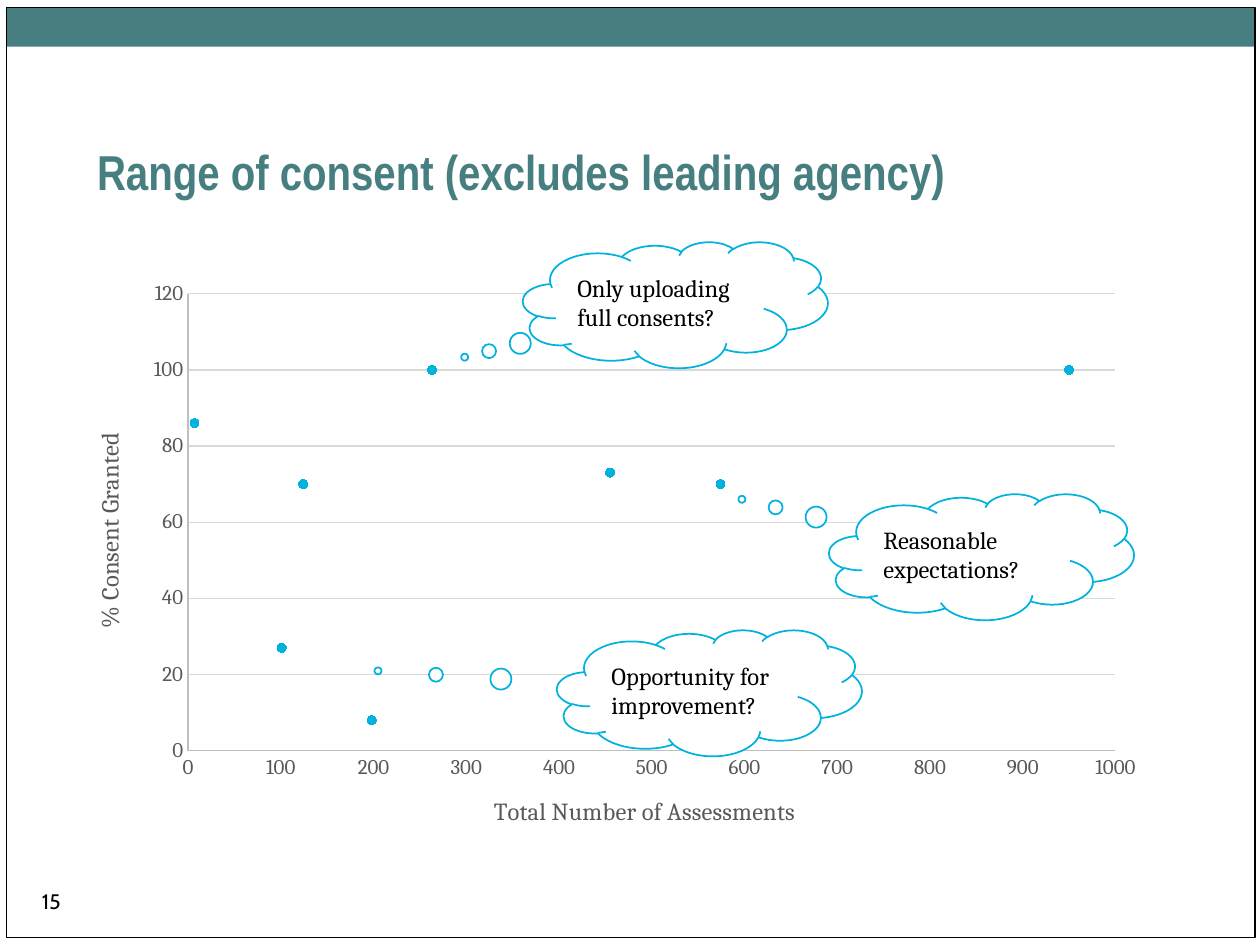
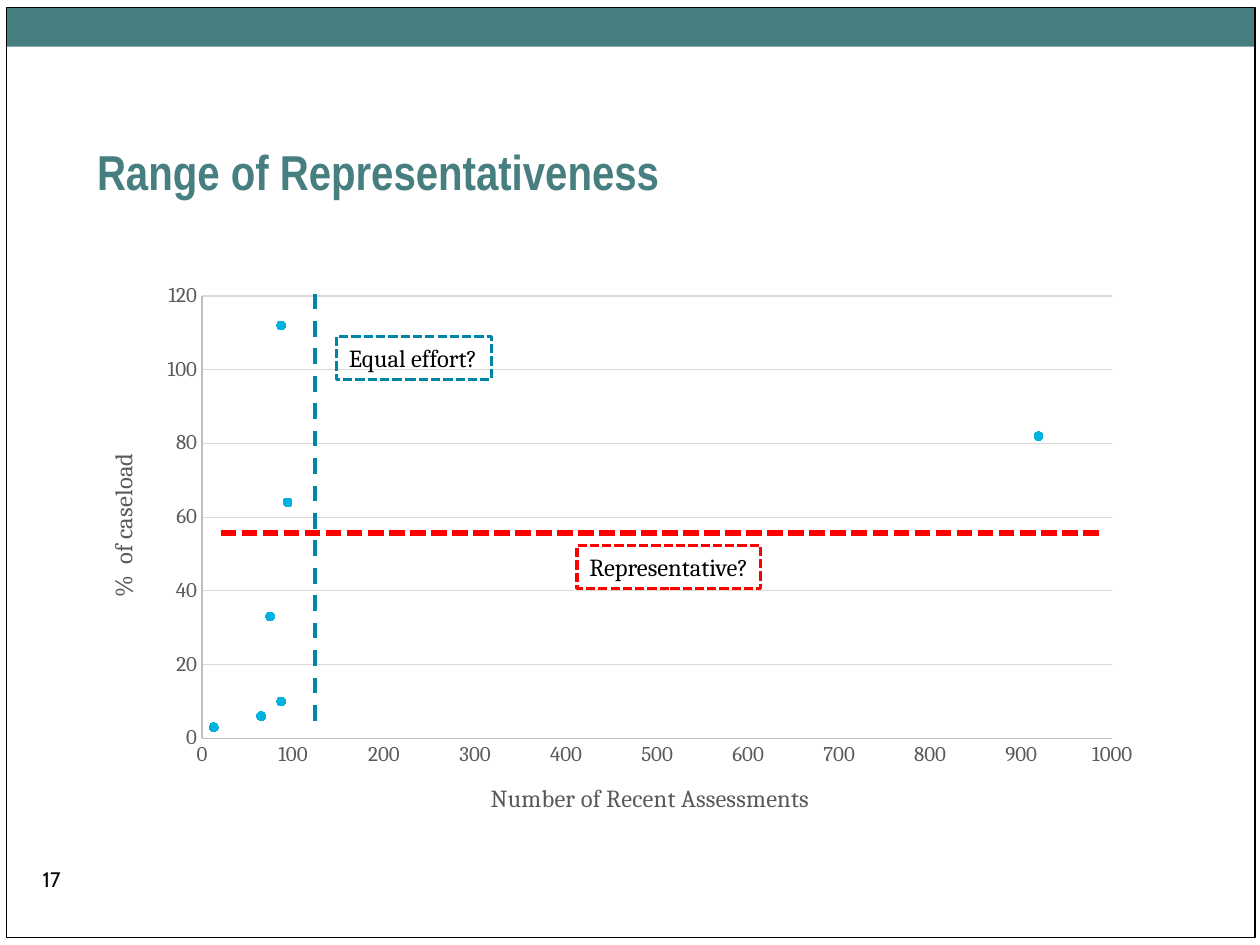
from collections import namedtuple

from lxml.etree import SubElement
from pptx import Presentation
from pptx.chart.data import XyChartData
from pptx.dml.color import RGBColor
from pptx.enum.chart import XL_CHART_TYPE, XL_MARKER_STYLE, XL_TICK_MARK
from pptx.enum.dml import MSO_LINE
from pptx.enum.shapes import MSO_CONNECTOR, MSO_SHAPE
from pptx.enum.text import MSO_ANCHOR, PP_ALIGN
from pptx.oxml import parse_xml
from pptx.oxml.ns import nsdecls, qn
from pptx.util import Inches, Pt

Box = namedtuple("Box", "left top width height")

TEAL, CYAN, DARK_CYAN, RED = "477F80", "00B2DD", "0085A6", "FF0000"
BLACK, WHITE, AXIS_TEXT, AXIS_LINE, GRID_LINE = "000000", "FFFFFF", "595959", "BFBFBF", "D9D9D9"
TITLE_FONT, NUMBER_FONT, BODY_FONT = "Arial Narrow", "Cabin", "Cambria"

FRAME_BOX = Box(0.05, 0.06, 9.91, 7.38)
BAND_BOX = FRAME_BOX._replace(height=0.31)
TITLE_BOX = Box(0.67, 0.64, 8.5, 1)
CHART_BOX = Box(0.66, 2.17, 8.5, 4.5)


def color(hex_string):
    return RGBColor.from_string(hex_string)


def inches(box):
    return [Inches(length) for length in box]


def within(outer, left, top, width, height):
    """Shift a box by the corner of the box that holds it."""
    return Box(outer.left + left, outer.top + top, width, height)


def style_font(font, name, size, hex_color, bold=False):
    font.name, font.size, font.bold = name, Pt(size), bold
    font.color.rgb = color(hex_color)


def style_line(line, hex_color, width, dash=None):
    line.color.rgb = color(hex_color)
    line.width = Pt(width)
    if dash is not None:
        line.dash_style = dash


def write(shape, text, font_name, size, hex_color, align=PP_ALIGN.LEFT, bold=False):
    shape.text_frame.text = text
    paragraph = shape.text_frame.paragraphs[0]
    paragraph.alignment = align
    style_font(paragraph.runs[0].font, font_name, size, hex_color, bold)


def add_master_decor(presentation, slide):
    """Draw the band and frame, then move them behind the master's placeholders."""
    band = slide.shapes.add_shape(MSO_SHAPE.RECTANGLE, *inches(BAND_BOX))
    band.fill.solid()
    band.fill.fore_color.rgb = color(TEAL)
    band.line.fill.background()
    frame = slide.shapes.add_shape(MSO_SHAPE.RECTANGLE, *inches(FRAME_BOX))
    frame.fill.background()
    style_line(frame.line, BLACK, 0.75)
    master_tree = presentation.slide_master.shapes.element
    for position, shape in enumerate((band, frame), start=2):
        shape.shadow.inherit = False
        master_tree.insert(position, shape.element)


def add_titled_slide(presentation, title, number, number_top):
    slide = presentation.slides.add_slide(presentation.slide_layouts[5])
    heading = slide.shapes.title
    heading.left, heading.top, heading.width, heading.height = inches(TITLE_BOX)
    write(heading, title, TITLE_FONT, 28, TEAL, bold=True)
    heading.text_frame.vertical_anchor = MSO_ANCHOR.BOTTOM
    number_box = slide.shapes.add_textbox(*inches(Box(0, number_top, 0.58, 0.5)))
    write(number_box, number, NUMBER_FONT, 12, BLACK, PP_ALIGN.RIGHT)
    return slide


def style_axis(axis, title, maximum, unit):
    axis.minimum_scale, axis.maximum_scale, axis.major_unit = 0, maximum, unit
    axis.major_tick_mark = axis.minor_tick_mark = XL_TICK_MARK.NONE
    style_font(axis.tick_labels.font, BODY_FONT, 12, AXIS_TEXT)
    style_line(axis.format.line, AXIS_LINE, 0.75)
    axis.axis_title.text_frame.text = title
    run = axis.axis_title.text_frame.paragraphs[0].runs[0]
    style_font(run.font, BODY_FONT, 14, AXIS_TEXT)


def set_plot_layout(chart, plot_box):
    """Fix the inner plot area, given as fractions of the chart."""
    plot_area = chart.element.find(".//" + qn("c:plotArea"))
    for layout in plot_area.findall(qn("c:layout")):
        plot_area.remove(layout)
    modes = '<c:layoutTarget val="inner"/><c:xMode val="edge"/><c:yMode val="edge"/>'
    sizes = "".join(f'<c:{tag} val="{value}"/>' for tag, value in zip("xywh", plot_box))
    plot_area.insert(0, parse_xml(
        f'<c:layout {nsdecls("c")}><c:manualLayout>{modes}{sizes}</c:manualLayout></c:layout>'))


def add_scatter(slide, box, points, x_title, y_title, plot_box):
    data = XyChartData()
    series = data.add_series("Series 1")
    for x, y in points:
        series.add_data_point(x, y)
    chart = slide.shapes.add_chart(XL_CHART_TYPE.XY_SCATTER, *inches(box), data).chart
    chart.has_legend = chart.has_title = False
    style_font(chart.font, BODY_FONT, 10, BLACK)
    style_axis(chart.category_axis, x_title, 1000, 100)
    style_axis(chart.value_axis, y_title, 120, 20)
    chart.category_axis.has_major_gridlines = False
    style_line(chart.value_axis.major_gridlines.format.line, GRID_LINE, 0.75)
    plot = chart.plots[0]
    plot.vary_by_categories = False
    dots = plot.series[0]
    dots.smooth = False
    dots.format.line.fill.background()
    dots.marker.style, dots.marker.size = XL_MARKER_STYLE.CIRCLE, 5
    dots.marker.format.fill.solid()
    dots.marker.format.fill.fore_color.rgb = color(CYAN)
    style_line(dots.marker.format.line, CYAN, 0.75)
    set_plot_layout(chart, plot_box)


def add_thought(slide, box, text, tail):
    cloud = slide.shapes.add_shape(MSO_SHAPE.CLOUD_CALLOUT, *inches(box))
    cloud.adjustments[0], cloud.adjustments[1] = tail
    cloud.shadow.inherit = False
    cloud.fill.solid()
    cloud.fill.fore_color.rgb = color(WHITE)
    style_line(cloud.line, CYAN, 1)
    write(cloud, text, BODY_FONT, 14, BLACK)
    cloud.text_frame.vertical_anchor = MSO_ANCHOR.MIDDLE


def add_labelled_threshold(slide, line_box, label_box, text, hex_color, width, dash):
    """Group a dashed line across the plot with its outlined question."""
    group = slide.shapes.add_group_shape()
    left, top, line_width, height = line_box
    line = group.shapes.add_connector(
        MSO_CONNECTOR.STRAIGHT, *inches((left, top, left + line_width, top + height)))
    style_line(line.line, hex_color, width, dash)
    SubElement(line.element.spPr, qn("a:effectLst"))
    label = group.shapes.add_textbox(*inches(label_box))
    style_line(label.line, hex_color, 1.75, MSO_LINE.SQUARE_DOT)
    label.line._get_or_add_ln().find(qn("a:prstDash")).set("val", "sysDash")
    write(label, text, BODY_FONT, 14, BLACK)
    label.text_frame.word_wrap = False


def add_consent_slide(presentation):
    slide = add_titled_slide(
        presentation, "Range of consent (excludes leading agency)", "15", 7)
    points = [(455, 73), (574, 70), (7, 86), (124, 70),
              (198, 8), (101, 27), (263, 100), (950, 100)]
    add_scatter(slide, CHART_BOX, points, "Total Number of Assessments",
                "% Consent Granted", (0.098, 0.036, 0.866, 0.806))
    thoughts = [
        (3.49, -0.25, "Only uploading full consents?", (-0.691, 0.415)),
        (5.92, 1.75, "Reasonable expectations?", (-0.786, -0.457)),
        (3.76, 2.83, "Opportunity for improvement?", (-1.087, -0.175)),
    ]
    for left, top, text, tail in thoughts:
        add_thought(slide, within(CHART_BOX, left, top, 2.42, 1), text, tail)
    return slide


def add_representativeness_slide(presentation):
    slide = add_titled_slide(presentation, "Range of Representativeness", "17", 6.83)
    points = [(87, 112), (94, 64), (13, 3), (919, 82), (75, 33), (65, 6), (87, 10)]
    add_scatter(slide, CHART_BOX, points, "Number of Recent Assessments",
                "%  of caseload", (0.111, 0.04, 0.85, 0.78))
    add_labelled_threshold(
        slide, within(CHART_BOX, 1.09, 2.06, 7, 0), within(CHART_BOX, 3.92, 2.16, 1.46, 0.34),
        "Representative?", RED, 3, MSO_LINE.SQUARE_DOT)
    add_labelled_threshold(
        slide, within(CHART_BOX, 1.84, 0.16, 0, 3.42), within(CHART_BOX, 2.01, 0.5, 1.23, 0.34),
        "Equal effort?", DARK_CYAN, 2.25, MSO_LINE.DASH)


def main():
    presentation = Presentation()
    presentation.slide_width, presentation.slide_height = Inches(10), Inches(7.5)
    consent_slide = add_consent_slide(presentation)
    add_representativeness_slide(presentation)
    add_master_decor(presentation, consent_slide)
    presentation.save("out.pptx")


if __name__ == "__main__":
    main()
